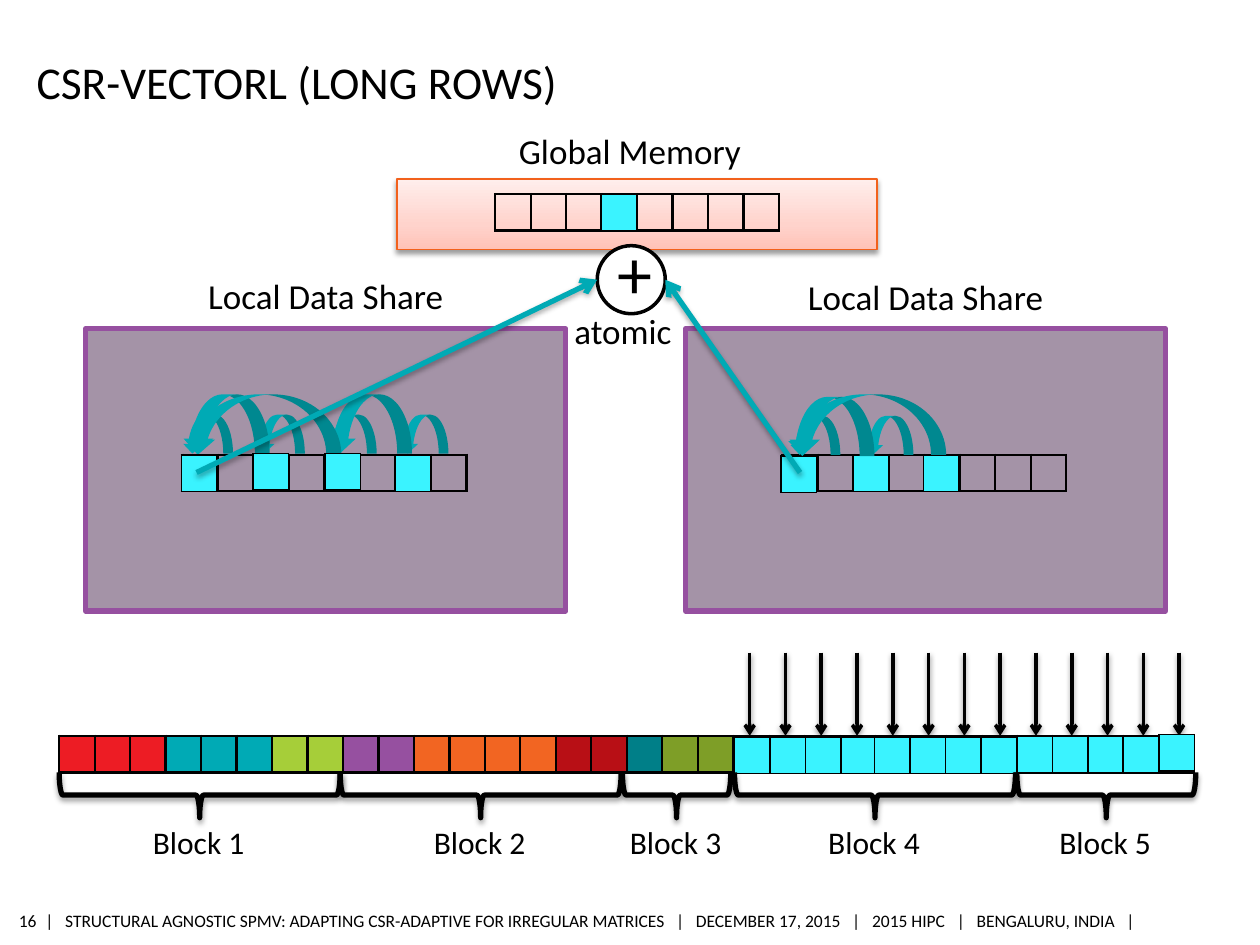
from copy import deepcopy
from dataclasses import dataclass

from lxml import etree
from pptx import Presentation
from pptx import util as u
from pptx.dml.color import RGBColor
from pptx.enum import shapes, text
from pptx.oxml.ns import qn

BLACK, WHITE, CYAN, TEAL = "000000", "FFFFFF", "3AF3FF", "00AAB5"
CELL, CELL_HEIGHT = 0.28, 0.29
PITCH = 9.02 / 32
SHAPE = shapes.MSO_SHAPE
MIDDLE = text.MSO_ANCHOR.MIDDLE

presentation = Presentation()


def inches(value: float) -> u.Length:
    return u.Cm(value * 2.54)


presentation.slide_width, presentation.slide_height = inches(10), inches(7.5)
slide = presentation.slides.add_slide(presentation.slide_layouts[6])


@dataclass
class Box:
    left: float
    top: float
    width: float
    height: float

    def lengths(self) -> list:
        return [inches(v) for v in (self.left, self.top, self.width, self.height)]


@dataclass
class Block:
    label: str
    left: float
    span: float


@dataclass
class DataShare:
    panel: Box
    label_top: float
    arcs: list
    marked: list


def color(value: str) -> RGBColor:
    return RGBColor.from_string(value)


def add_text(content: str, box: Box, size: float, align=None, anchor=None, wrap=False,
             grow=True, insets=(0.1, 0.05, 0.1, 0.05), line_spacing=None, after=0):
    shape = slide.shapes.add_textbox(*box.lengths())
    frame = shape.text_frame
    frame.word_wrap = wrap
    frame.auto_size = text.MSO_AUTO_SIZE.SHAPE_TO_FIT_TEXT if grow else text.MSO_AUTO_SIZE.NONE
    frame.vertical_anchor = anchor
    (frame.margin_left, frame.margin_top,
     frame.margin_right, frame.margin_bottom) = map(inches, insets)
    paragraph = frame.paragraphs[0]
    paragraph.alignment = align
    paragraph.line_spacing = line_spacing
    paragraph.space_after = u.Pt(after)
    run = paragraph.add_run()
    run.text = content
    run.font.name, run.font.size = "Calibri", u.Pt(size)
    run.font.color.rgb = color(BLACK)
    return shape


def add_shadow(effects, alpha: int = 38) -> None:
    shadow = etree.SubElement(effects, qn("a:outerShdw"), blurRad=str(u.Pt(3.1)),
                              dist=str(u.Pt(1.6)), dir="5400000", rotWithShape="0")
    tint = etree.SubElement(shadow, qn("a:srgbClr"), val=BLACK)
    etree.SubElement(tint, qn("a:alpha"), val=str(alpha * 1000))


def add_preset(preset, box: Box, fill: str = None, line: str = None, width: float = 1,
               alpha: int = None, shadow: bool = False):
    shape = slide.shapes.add_shape(preset, *box.lengths())
    shape.shadow.inherit = False
    properties = shape._element.spPr
    if fill:
        shape.fill.solid()
        shape.fill.fore_color.rgb = color(fill)
        if alpha:
            tint = properties.find(qn("a:solidFill")).find(qn("a:srgbClr"))
            etree.SubElement(tint, qn("a:alpha"), val=str(alpha * 1000))
    else:
        shape.fill.background()
    if line:
        shape.line.color.rgb = color(line)
        shape.line.width = u.Pt(width)
    else:
        shape.line.fill.background()
    if shadow:
        add_shadow(properties.find(qn("a:effectLst")))
    return shape


def add_arrow(start: tuple, end: tuple, line: str, width: float, alpha: int = 38) -> None:
    arrow = slide.shapes.add_connector(shapes.MSO_CONNECTOR.STRAIGHT,
                                       *map(inches, start + end))
    arrow.line.color.rgb = color(line)
    arrow.line.width = u.Pt(width)
    properties = arrow._element.spPr
    etree.SubElement(properties.find(qn("a:ln")), qn("a:tailEnd"), type="arrow")
    add_shadow(etree.SubElement(properties, qn("a:effectLst")), alpha)


def add_cells(left: float, top: float, fills: list, border: float = 1) -> None:
    box = Box(left, top, PITCH * len(fills), CELL_HEIGHT)
    table = slide.shapes.add_table(1, len(fills), *box.lengths()).table
    table.first_row = table.horz_banding = False
    for cell, fill in zip(table.rows[0].cells, fills):
        cell.margin_left = cell.margin_right = cell.margin_top = cell.margin_bottom = 0
        etree.SubElement(cell.text_frame.paragraphs[0]._p, qn("a:endParaRPr"), sz="800")
        properties = cell._tc.get_or_add_tcPr()
        for side in ("lnL", "lnR", "lnT", "lnB"):
            edge = etree.SubElement(properties, qn(f"a:{side}"), w=str(u.Pt(border)))
            solid = etree.SubElement(edge, qn("a:solidFill"))
            etree.SubElement(solid, qn("a:srgbClr"), val=BLACK)
        if fill:
            cell.fill.solid()
            cell.fill.fore_color.rgb = color(fill)
        else:
            cell.fill.background()


def add_arc(box: Box) -> None:
    arc = add_preset(SHAPE.CURVED_DOWN_ARROW, box, TEAL)
    arc._element.spPr.find(qn("a:xfrm")).set("flipH", "1")


def add_block(block: Block) -> None:
    center, depth = block.left + block.span / 2, 0.36
    brace = add_preset(SHAPE.LEFT_BRACE, Box(center - depth / 2, 6.31 - block.span / 2,
                                             depth, block.span),
                       line=BLACK, width=3, shadow=True)
    brace.rotation = 270
    add_text(block.label, Box(center - 0.47, 6.48, 0.94, 0.4), 18)


def add_data_share(share: DataShare) -> None:
    panel = share.panel
    add_preset(SHAPE.RECTANGLE, panel, "4B2850", "9650A0", 3, alpha=50)
    add_text("Local Data Share", Box(panel.left, share.label_top, panel.width, 0.44), 20,
             align=text.PP_ALIGN.CENTER, wrap=True, after=6)
    add_cells(panel.left + 0.77, 3.61, [None] * 8, 1.5)
    for arc in share.arcs:
        add_arc(arc)
    for left, top in share.marked:
        add_cells(left, top, [CYAN])


# Title and footer
add_text("CSR-VECTORL (LONG ROWS)", Box(0.29, 0.34, 8.4, 0.52), 26, wrap=True, grow=False,
         anchor=text.MSO_ANCHOR.BOTTOM, insets=(0, 0.05, 0, 0))
footer = dict(size=10, anchor=MIDDLE, insets=(0, 0.04, 0, 0.04))
add_text("|   STRUCTURAL AGNOSTIC SPMV: ADAPTING CSR-ADAPTIVE FOR IRREGULAR MATRICES   |   "
         "DECEMBER 17, 2015   |   2015 HIPC   |   BENGALURU, INDIA   |",
         Box(0.36, 7.18, 8.73, 0.26), **footer)
add_text("16", Box(0.13, 7.18, 0.16, 0.26), align=text.PP_ALIGN.RIGHT, **footer)

# Global memory panel
memory = add_preset(SHAPE.RECTANGLE, Box(3.15, 1.42, 3.81, 0.56), line="F2611C",
                    width=0.75, shadow=True)
memory.fill.gradient()
memory.fill.gradient_angle = 90
stop_list = memory._element.spPr.find(qn("a:gradFill")).find(qn("a:gsLst"))
stop_list.insert(1, deepcopy(stop_list[0]))
gradient = [(0, "FFC2B7"), (0.35, "FFD3CC"), (1, "FFEEEC")]
for stop, (position, tint) in zip(memory.fill.gradient_stops, gradient):
    stop.position, stop.color.rgb = position, color(tint)

# Matrix values, with the long rows in cyan
row_runs = [("ED1C24", 3), (TEAL, 3), ("A6CE39", 2), ("9650A0", 2), ("F26522", 4),
            ("B80F15", 2), ("007F88", 1), ("7E9E27", 2), (CYAN, 13)]
add_cells(0.47, 5.84, [fill for fill, count in row_runs for _ in range(count)], 1.5)
for index in range(13):
    x = 5.95 + 0.284 * index
    add_arrow((x, 5.18), (x, 5.84), BLACK, 2)
for left, top, count in [(5.83, 5.85, 4), (8.07, 5.84, 4), (6.94, 5.85, 4), (9.2, 5.83, 1)]:
    add_cells(left, top, [CYAN] * count)

# Row blocks
for block in [Block("Block 1", 0.47, 2.23), Block("Block 2", 2.7, 2.23),
              Block("Block 3", 4.94, 0.86), Block("Block 4", 5.83, 2.23),
              Block("Block 5", 8.07, 1.42)]:
    add_block(block)

# Local data shares with their reduction arcs
add_data_share(DataShare(
    Box(0.68, 2.61, 3.81, 2.24), 2.13,
    [Box(1.45 + 0.57 * i, 3.29, 0.4, 0.31) for i in range(4)]
    + [Box(left, 3.13, 0.69, 0.47) for left in (1.45, 2.58)] + [Box(1.45, 3.13, 1.26, 0.48)],
    [(1.44, 3.61), (2.01, 3.6), (2.58, 3.6), (3.14, 3.61)]))
add_data_share(DataShare(
    Box(5.44, 2.61, 3.81, 2.24), 2.14,
    [Box(left, 3.3, 0.4, 0.31) for left in (6.27, 6.85)],
    [(6.2, 3.62), (6.77, 3.61), (7.33, 3.61)]))
add_arc(Box(6.25, 3.15, 0.69, 0.47))
add_arc(Box(6.25, 3.13, 1.26, 0.48))

# Atomic addition into global memory
caption = dict(anchor=MIDDLE, line_spacing=0.9, after=3)
add_text("Global Memory", Box(4.02, 1.01, 1.98, 0.41), 20, **caption)
circle = add_preset(SHAPE.OVAL, Box(4.74, 1.95, 0.54, 0.54), WHITE, BLACK, 2)
plus = add_text("+", Box(4.8, 1.87, 0.43, 0.65), 40, **caption)
slide.shapes.add_group_shape([circle, plus])
add_cells(3.93, 1.54, [None] * 8, 1.5)
add_arrow((1.56, 3.75), (4.74, 2.22), TEAL, 3, alpha=35)
add_arrow((6.35, 3.75), (5.28, 2.22), TEAL, 3, alpha=35)
add_cells(4.77, 1.54, [CYAN])
add_text("atomic", Box(4.46, 2.44, 0.99, 0.41), 20, **caption)

presentation.save("out.pptx")
